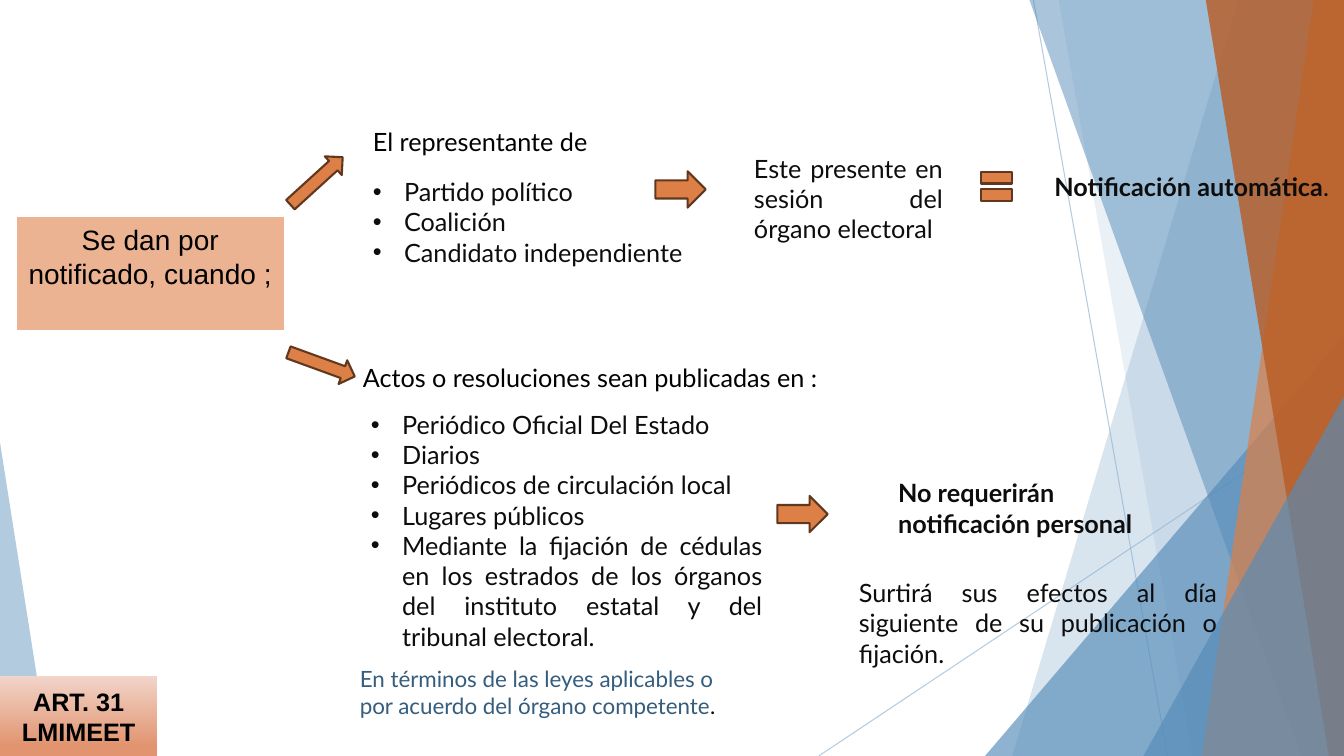
import pptx
import pptx.util
import pptx.dml.color
import pptx.enum.shapes
import pptx.enum.text
import pptx.oxml
import pptx.oxml.ns

PX = 9144  # 100 px to the inch
WIDTH, HEIGHT = 1333, 750

RGB = pptx.dml.color.RGBColor
SKY = RGB(0x94, 0xB6, 0xD2)
BLUE = RGB(0x55, 0x8B, 0xB8)
NAVY = RGB(0x35, 0x5D, 0x7E)
ORANGE = RGB(0xDD, 0x80, 0x47)
RUST = RGB(0xB9, 0x5B, 0x22)
BROWN = RGB(0x61, 0x38, 0x1F)
PEACH = RGB(0xEB, 0xB3, 0x91)
BLUSH = RGB(0xF2, 0xD4, 0xC9)
CORAL = RGB(0xE1, 0x94, 0x6F)
BLACK = RGB(0, 0, 0)
INK = RGB(0x0D, 0x0D, 0x0D)

SHAPE = pptx.enum.shapes.MSO_SHAPE
LEFT = pptx.enum.text.PP_ALIGN.LEFT
CENTER = pptx.enum.text.PP_ALIGN.CENTER
JUSTIFY = pptx.enum.text.PP_ALIGN.JUSTIFY
TOP = pptx.enum.text.MSO_ANCHOR.TOP
MIDDLE = pptx.enum.text.MSO_ANCHOR.MIDDLE


def emu(*lengths):
    return [length * PX for length in lengths]


def sub_element(parent, tag, **attributes):
    child = pptx.oxml.parse_xml(f"<a:{tag} {pptx.oxml.ns.nsdecls('a')}/>")
    for key, value in attributes.items():
        child.set(key, str(value))
    parent.append(child)
    return child


def set_opacity(element, percent):
    color = element.find(".//" + pptx.oxml.ns.qn("a:srgbClr"))
    sub_element(color, "alpha", val=percent * 1000)


def paint_facet(facet, color, opacity):
    facet.shadow.inherit = False
    facet.fill.solid()
    facet.fill.fore_color.rgb = color
    facet.line.fill.background()
    set_opacity(facet._element.spPr, opacity)


def add_facet(slide, points, color, opacity):
    builder = slide.shapes.build_freeform(*points[0], scale=PX)
    builder.add_line_segments(points[1:], close=True)
    paint_facet(builder.convert_to_shape(), color, opacity)


def add_triangle(slide, box, apex, color, opacity):
    triangle = slide.shapes.add_shape(SHAPE.ISOSCELES_TRIANGLE, *emu(*box))
    triangle.adjustments[0] = apex
    paint_facet(triangle, color, opacity)


def add_hairline(slide, *ends):
    hairline = slide.shapes.add_connector(
        pptx.enum.shapes.MSO_CONNECTOR.STRAIGHT, *emu(*ends))
    hairline.line.color.rgb = SKY
    hairline.line.width = pptx.util.Pt(0.75)
    set_opacity(hairline._element.spPr, 70)
    sub_element(hairline._element.spPr, "effectLst")


def add_sign(slide, kind, box, rotation=0):
    sign = slide.shapes.add_shape(kind, *emu(*box))
    sign.rotation = rotation
    sign.shadow.inherit = False
    sign.fill.solid()
    sign.fill.fore_color.rgb = ORANGE
    sign.line.color.rgb = BROWN
    sign.line.width = pptx.util.Pt(1.5)


def style_paragraph(paragraph, size, font, color, align, bold=False):
    paragraph.alignment = align
    paragraph.font.size = pptx.util.Pt(size)
    paragraph.font.name = font
    paragraph.font.bold = bold
    paragraph.font.color.rgb = color


def add_bullet(paragraph):
    properties = paragraph._p.get_or_add_pPr()
    properties.set("marL", str(31 * PX))
    properties.set("indent", str(-31 * PX))
    bullet_font = sub_element(properties, "buFont", typeface="Arial")
    bullet = sub_element(properties, "buChar", char="•")
    properties.remove(bullet_font)
    properties.remove(bullet)
    properties.insert(0, bullet)
    properties.insert(0, bullet_font)


def add_text(slide, box, lines, align=LEFT, color=INK, size=18, bold=False, bullets=False):
    frame = slide.shapes.add_textbox(*emu(*box)).text_frame
    frame.word_wrap = True
    for index, line in enumerate(lines):
        paragraph = frame.add_paragraph() if index else frame.paragraphs[0]
        paragraph.add_run().text = line
        style_paragraph(paragraph, size, "Lato", color, align, bold)
        if bullets:
            add_bullet(paragraph)
    return frame


def add_ending(frame, text):
    ending = frame.paragraphs[0].add_run()
    ending.text = text
    ending.font.bold = False
    ending.font.color.rgb = INK


def add_panel(slide, box, text, size, anchor, bold=False):
    panel = slide.shapes.add_shape(SHAPE.RECTANGLE, *emu(*box))
    panel.shadow.inherit = False
    panel.line.fill.background()
    frame = panel.text_frame
    frame.word_wrap = True
    frame.vertical_anchor = anchor
    frame.text = text
    style_paragraph(frame.paragraphs[0], size, "Arial", BLACK, CENTER, bold)
    return panel


def add_background(slide):
    add_hairline(slide, 1025, 0, 1158, HEIGHT)
    add_hairline(slide, WIDTH, 403, 812, HEIGHT)
    right_top, right_bottom = (WIDTH, 0), (WIDTH, HEIGHT)

    def add_band(top, bottom, color, opacity):
        add_facet(slide, [(top, 0), right_top, right_bottom, (bottom, HEIGHT)], color, opacity)

    add_band(1228, 1004, SKY, 36)
    add_band(1050, 1183, SKY, 20)
    add_triangle(slide, (977, 333, 356, 417), 1, BLUE, 66)
    add_band(1021, 1291, BLUE, 50)
    add_band(1303, 1192, ORANGE, 70)
    add_band(1196, 1318, RUST, 80)
    add_triangle(slide, (1134, 393, 199, 357), 1, BLUE, 66)
    add_triangle(slide, (0, 439, 49, 311), 0, SKY, 70)


def main():
    deck = pptx.Presentation()
    deck.slide_width, deck.slide_height = emu(WIDTH, HEIGHT)
    slide = deck.slides.add_slide(deck.slide_layouts[6])
    add_background(slide)

    # Starting point and its two branches
    start = add_panel(slide, (17, 216, 264, 111), "Se dan por notificado, cuando ;", 20, TOP)
    start.fill.solid()
    start.fill.fore_color.rgb = PEACH
    start.line.color.rgb = PEACH
    start.line.width = pptx.util.Pt(0.75)
    add_sign(slide, SHAPE.RIGHT_ARROW, (279, 167, 70, 25), 317.7)
    add_sign(slide, SHAPE.RIGHT_ARROW, (284, 349, 70, 25), 20)

    # Upper branch: automatic notification
    add_text(slide, (360, 120, 264, 40), ["El representante de"], color=BLACK)
    add_text(slide, (360, 170, 333, 101),
             ["Partido político", "Coalición", "Candidato independiente"], JUSTIFY, bullets=True)
    add_sign(slide, SHAPE.RIGHT_ARROW, (650, 170, 50, 36))
    add_text(slide, (738, 147, 207, 101),
             ["Este presente en sesión del órgano electoral"], JUSTIFY)
    add_sign(slide, SHAPE.MATH_EQUAL, (967, 160, 42, 50))
    automatic = add_text(slide, (1036, 165, 297, 40), ["Notificación automática"], bold=True)
    add_ending(automatic, ".")

    # Lower branch: published acts
    add_text(slide, (350, 355, 491, 40),
             ["Actos o resoluciones sean publicadas en :"], color=BLACK)
    add_text(slide, (358, 401, 408, 252),
             ["Periódico Oficial Del Estado", "Diarios", "Periódicos de circulación local",
              "Lugares públicos",
              "Mediante la fijación de cédulas en los estrados de los órganos "
              "del instituto estatal y del tribunal electoral."], JUSTIFY, bullets=True)
    terms = add_text(slide, (347, 655, 379, 64),
                     ["En términos de las leyes aplicables o por acuerdo del órgano competente"],
                     color=NAVY, size=16)
    add_ending(terms, ".")
    add_sign(slide, SHAPE.RIGHT_ARROW, (771, 492, 50, 36))
    add_text(slide, (881, 469, 254, 71), ["No requerirán notificación personal"], bold=True)
    add_text(slide, (842, 568, 375, 71),
             ["Surtirá sus efectos al día siguiente de su publicación o fijación."], JUSTIFY)

    # Article reference
    article = add_panel(slide, (0, 671, 156, 79), "ART. 31 LMIMEET", 18, MIDDLE, bold=True)
    article.fill.gradient()
    article.fill.gradient_angle = 270
    for stop, color, position in zip(article.fill.gradient_stops, (BLUSH, CORAL), (0, 0.88)):
        stop.color.rgb = color
        stop.position = position

    deck.save("out.pptx")


if __name__ == "__main__":
    main()
